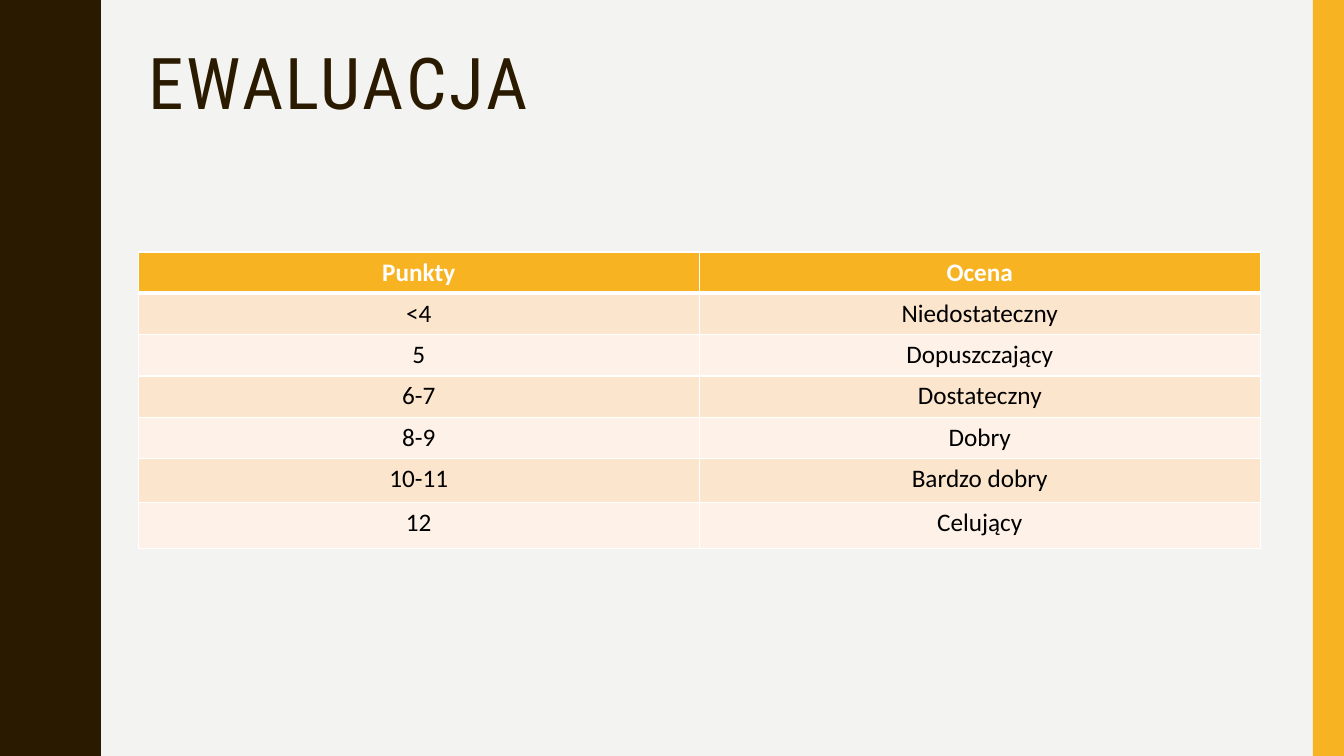
import pptx
import pptx.util
import pptx.dml.color
import pptx.enum.shapes
import pptx.enum.text
import lxml.etree
from pptx.util import Inches


class Theme:
    background = "F3F3F2"
    dark = "2A1A00"
    accent = "F8B323"
    bands = ("FEF2E8", "FCE5CD")
    white = "FFFFFF"
    black = "000000"
    title_font, title_size = "Roboto Condensed", 51
    body_font, body_size = "Calibri", 18


def paint(fill, color):
    fill.solid()
    fill.fore_color.rgb = pptx.dml.color.RGBColor.from_string(color)


def set_font(font, name, size, color, bold=False):
    font.name, font.size, font.bold = name, pptx.util.Pt(size), bold
    paint(font.fill, color)


prs = pptx.Presentation()
prs.slide_width, prs.slide_height = Inches(13.33), Inches(7.5)
s = prs.slides.add_slide(prs.slide_layouts[5])
paint(s.background.fill, Theme.background)

# Wavy left edge: half a wave, mirrored and repeated down the slide
half_wave = [(0.78, 0), (0.78, 0.07), (0.79, 0.14), (0.8, 0.2), (0.81, 0.25),
             (0.83, 0.29), (0.93, 0.5), (0.95, 0.55), (0.96, 0.61), (0.97, 0.68)]
period = 1.5
wave = half_wave + [(0.97, 0.75)] + [(x, period - y) for x, y in half_wave[:0:-1]]
edge = [(x, y + period * i) for i in range(5) for x, y in wave]
builder = s.shapes.build_freeform(0, 0, scale=Inches(1))
builder.add_line_segments(edge + [(0.78, 7.5), (0, 7.5)], close=True)
band = builder.convert_to_shape()

# Right bar
bar = s.shapes.add_shape(pptx.enum.shapes.MSO_SHAPE.RECTANGLE,
                         Inches(13.02), 0, Inches(0.31), Inches(7.5))
for sp, color in ((band, Theme.dark), (bar, Theme.accent)):
    paint(sp.fill, color)
    sp.line.fill.background()
    sp.shadow.inherit = False

# Title
title = s.shapes.title
title.left, title.top = Inches(1.37), Inches(0.42)
title.width, title.height = Inches(11.13), Inches(1.63)
tf = title.text_frame
tf.text = "EWALUACJA"
tf.word_wrap = True
tf.auto_size = pptx.enum.text.MSO_AUTO_SIZE.NONE
tf.vertical_anchor = pptx.enum.text.MSO_ANCHOR.TOP
p = tf.paragraphs[0]
p.alignment = pptx.enum.text.PP_ALIGN.LEFT
p.line_spacing = 0.9
set_font(p.font, Theme.title_font, Theme.title_size, Theme.dark)
p.runs[0]._r.get_or_add_rPr().set("spc", "200")

# Grade table
grades = [("Punkty", "Ocena"), ("<4", "Niedostateczny"), ("5", "Dopuszczający"),
          ("6-7", "Dostateczny"), ("8-9", "Dobry"), ("10-11", "Bardzo dobry"),
          ("12", "Celujący")]
heights = [0.41] * 5 + [0.44, 0.45]
table = s.shapes.add_table(len(grades), 2, Inches(1.37), Inches(2.5),
                           Inches(11.13), Inches(sum(heights))).table
for i, (row, height) in enumerate(zip(grades, heights)):
    table.rows[i].height = Inches(height)
    header = i == 0
    for j, text in enumerate(row):
        cell = table.cell(i, j)
        cell.text = text
        p = cell.text_frame.paragraphs[0]
        p.alignment = pptx.enum.text.PP_ALIGN.CENTER
        set_font(p.font, Theme.body_font, Theme.body_size,
                 Theme.white if header else Theme.black, header)
        paint(cell.fill, Theme.accent if header else Theme.bands[i % 2])

        # White borders, thicker under the header
        tcPr = cell._tc.get_or_add_tcPr()
        for k, side in enumerate("LRTB"):
            thick = (i, side) in ((0, "B"), (1, "T"))
            ln = lxml.etree.Element(pptx.oxml.ns.qn(f"a:ln{side}"),
                                    w=str(pptx.util.Pt(3 if thick else 1)))
            fill = lxml.etree.SubElement(ln, pptx.oxml.ns.qn("a:solidFill"))
            lxml.etree.SubElement(fill, pptx.oxml.ns.qn("a:srgbClr"), val=Theme.white)
            tcPr.insert(k, ln)

prs.save("out.pptx")
